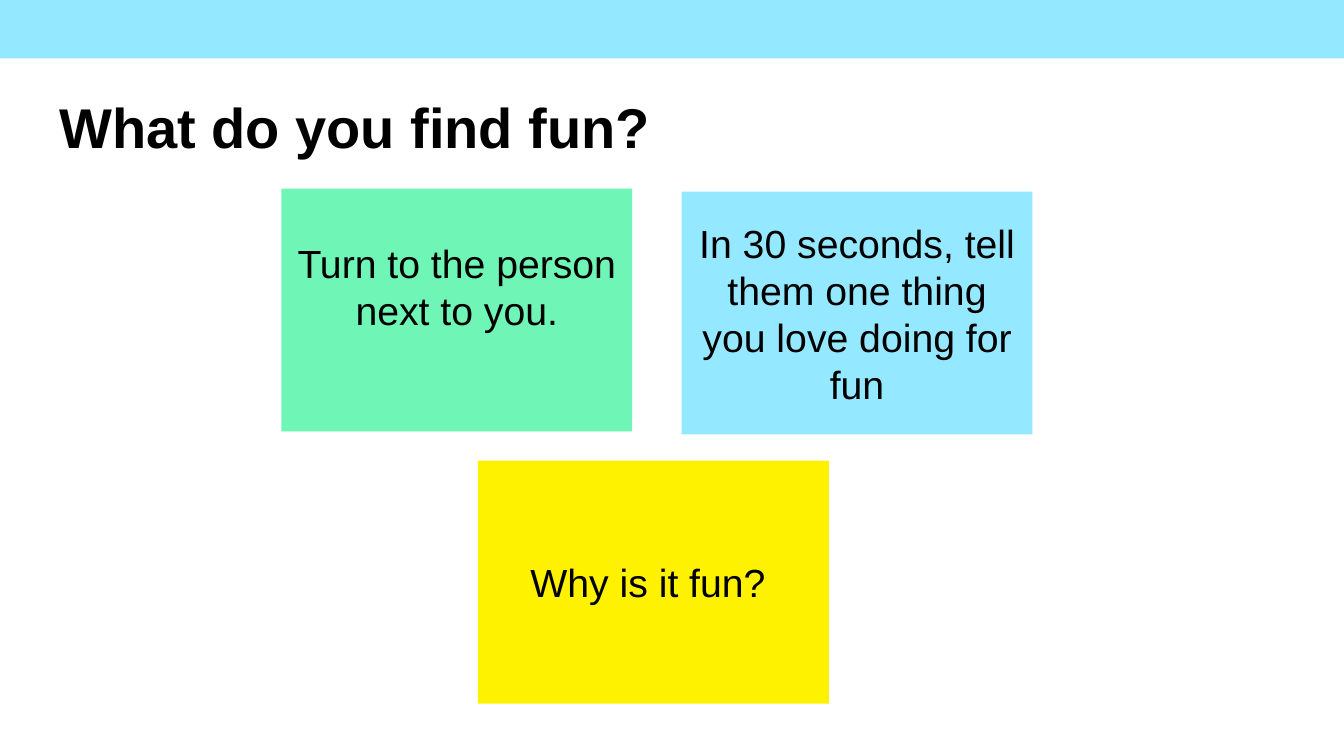
from pptx import Presentation
from pptx.dml.color import RGBColor
from pptx.enum.shapes import MSO_SHAPE
from pptx.enum.text import MSO_ANCHOR, PP_ALIGN
from pptx.util import Inches, Pt

RECTANGLE = MSO_SHAPE.RECTANGLE
MIDDLE = MSO_ANCHOR.MIDDLE
LEFT, CENTER = PP_ALIGN.LEFT, PP_ALIGN.CENTER
TITLE_ONLY = 5


def color(hex_value):
    return RGBColor.from_string(hex_value)


def write(shape, text, size=28, bold=False, align=CENTER, spacing=1.0, bottom=0.05):
    frame = shape.text_frame
    frame.word_wrap = True
    frame.vertical_anchor = MIDDLE
    frame.margin_left = frame.margin_right = Inches(0.1)
    frame.margin_top, frame.margin_bottom = Inches(0.05), Inches(bottom)
    paragraph = frame.paragraphs[0]
    paragraph.alignment = align
    paragraph.line_spacing = spacing
    run = paragraph.add_run()
    run.text = text
    run.font.name = "Arial"
    run.font.size = Pt(size)
    run.font.bold = bold
    run.font.color.rgb = color("000000")


deck = Presentation()
deck.slide_width, deck.slide_height = Inches(13.33), Inches(7.5)
slide = deck.slides.add_slide(deck.slide_layouts[TITLE_ONLY])

question = slide.shapes.title
question.left, question.top = Inches(0.49), Inches(0.57)
question.width, question.height = Inches(11.5), Inches(1.45)
write(question, "What do you find fun?", size=40, bold=True, align=LEFT, spacing=0.9)

CARD_WIDTH, CARD_HEIGHT = 3.48, 2.41
panels = [
    (0, 0, 13.33, 0.58, "94E8FF", "", 0.05),
    (2.79, 1.87, CARD_WIDTH, CARD_HEIGHT, "6FF5B6", "Turn to the person next to you.", 0.52),
    (6.76, 1.9, CARD_WIDTH, CARD_HEIGHT, "94E8FF",
     "In 30 seconds, tell them one thing you love doing for fun", 0.05),
    (4.74, 4.57, CARD_WIDTH, CARD_HEIGHT, "FFF200", "Why is it fun? ", 0.05),
]
for left, top, width, height, fill, prompt, bottom in panels:
    panel = slide.shapes.add_shape(
        RECTANGLE, Inches(left), Inches(top), Inches(width), Inches(height))
    panel.shadow.inherit = False
    panel.fill.solid()
    panel.fill.fore_color.rgb = color(fill)
    panel.line.fill.background()
    if prompt:
        write(panel, prompt, bottom=bottom)

deck.save("out.pptx")
